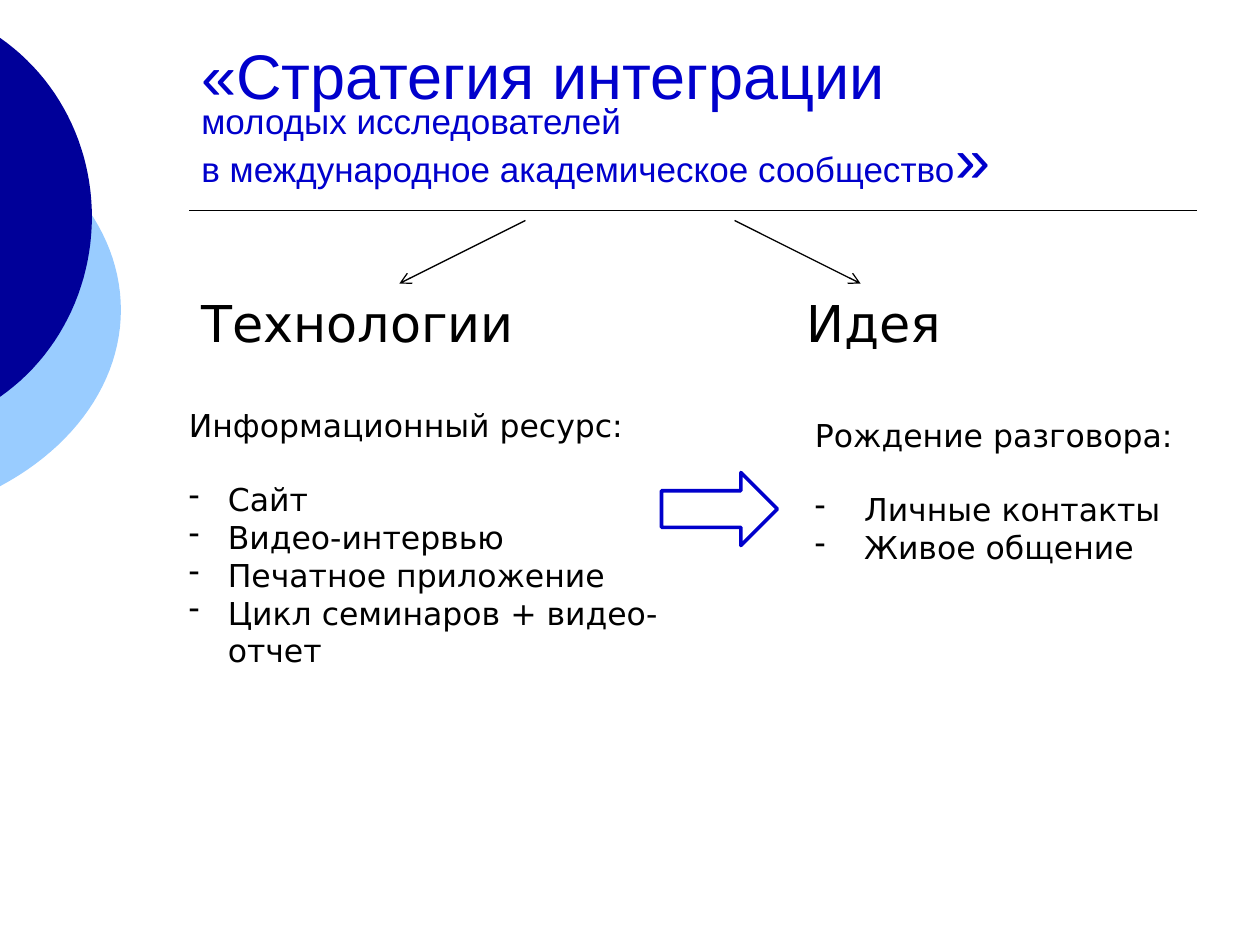
from lxml import etree
from pptx import Presentation
from pptx.dml.color import RGBColor
from pptx.enum.shapes import MSO_CONNECTOR, MSO_SHAPE
from pptx.enum.text import MSO_ANCHOR
from pptx.oxml.ns import qn
from pptx.util import Inches, Pt

BLACK, WHITE, BLUE = "000000", "FFFFFF", "0000CC"
NAVY, SKY = "000099", "99CCFF"
CURVE_STEPS = 24


def color(hex_string):
    return RGBColor.from_string(hex_string)


def bezier(points):
    """Return points along a cubic curve, without its start."""
    result = []
    for step in range(1, CURVE_STEPS + 1):
        t = step / CURVE_STEPS
        weights = ((1 - t) ** 3, 3 * t * (1 - t) ** 2, 3 * t * t * (1 - t), t ** 3)
        result.append(tuple(sum(w * p[axis] for w, p in zip(weights, points))
                            for axis in (0, 1)))
    return result


class SlideBuilder:
    title_font = "Arial"
    body_font = "DejaVu Sans"

    def __init__(self, slide):
        self.slide = slide

    def edge_disc(self, top, middle, bottom, reach, bulge, shoulder, fill):
        """Draw the part of a disc that bulges in from the left slide edge."""
        upper = [(0, top), (bulge, top + shoulder),
                 (reach, middle - (middle - top) * 0.4), (reach, middle)]
        lower = [(reach, middle), (reach, middle + (bottom - middle) * 0.4),
                 (bulge, bottom - shoulder), (0, bottom)]
        outline = bezier(upper) + bezier(lower)
        builder = self.slide.shapes.build_freeform(0, Inches(top), scale=1.0)
        builder.add_line_segments([(Inches(x), Inches(y)) for x, y in outline], close=True)
        shape = builder.convert_to_shape()
        shape.shadow.inherit = False
        shape.fill.solid()
        shape.fill.fore_color.rgb = color(fill)
        shape.line.fill.background()

    def line(self, start, end, width, arrow=False):
        connector = self.slide.shapes.add_connector(
            MSO_CONNECTOR.STRAIGHT, *(Inches(value) for value in start + end))
        connector.line.color.rgb = color(BLACK)
        connector.line.width = Pt(width)
        properties = connector._element.spPr
        if arrow:
            etree.SubElement(properties.find(qn("a:ln")), qn("a:tailEnd"), type="arrow")
        etree.SubElement(properties, qn("a:effectLst"))

    def text_frame(self, left, top, width, height, fill=None):
        box = self.slide.shapes.add_textbox(
            Inches(left), Inches(top), Inches(width), Inches(height))
        if fill:
            box.fill.solid()
            box.fill.fore_color.rgb = color(fill)
        box.text_frame.word_wrap = True
        return box.text_frame

    def style(self, paragraph, name, size, font_color):
        paragraph.font.name = name
        paragraph.font.size = Pt(size)
        paragraph.font.color.rgb = color(font_color)

    def title(self, left, top, width, height, lines):
        """Write one paragraph; each line is a list of (text, size) runs."""
        frame = self.text_frame(left, top, width, height)
        frame.vertical_anchor = MSO_ANCHOR.BOTTOM
        paragraph = frame.paragraphs[0]
        paragraph.line_spacing = 0.7
        self.style(paragraph, self.title_font, 20, BLUE)
        for index, runs in enumerate(lines):
            if index:
                paragraph.add_line_break()
            for text, size in runs:
                run = paragraph.add_run()
                run.text = text
                run.font.size = Pt(size)

    def headings(self, left, top, width, height, texts, tab):
        paragraph = self.text_frame(left, top, width, height).paragraphs[0]
        paragraph.text = "\t".join(texts)
        tabs = etree.SubElement(paragraph._p.get_or_add_pPr(), qn("a:tabLst"))
        etree.SubElement(tabs, qn("a:tab"), pos=str(Inches(tab)), algn="l")
        self.style(paragraph, self.body_font, 29, BLACK)

    def dash_list(self, left, top, width, height, heading, items, indent, fill=None):
        frame = self.text_frame(left, top, width, height, fill)
        first = frame.paragraphs[0]
        first.text = heading
        first.space_after = Pt(21)
        self.style(first, self.body_font, 18, BLACK)
        for item in items:
            paragraph = frame.add_paragraph()
            paragraph.text = item
            properties = paragraph._p.get_or_add_pPr()
            properties.set("marL", str(Inches(indent)))
            properties.set("indent", str(-Inches(indent)))
            etree.SubElement(properties, qn("a:buChar"), char="-")
            self.style(paragraph, self.body_font, 18, BLACK)

    def block_arrow(self, left, top, width, height):
        shape = self.slide.shapes.add_shape(
            MSO_SHAPE.RIGHT_ARROW, Inches(left), Inches(top), Inches(width), Inches(height))
        shape.shadow.inherit = False
        shape.fill.solid()
        shape.fill.fore_color.rgb = color(WHITE)
        shape.line.color.rgb = color(BLUE)
        shape.line.width = Pt(2)


def main():
    presentation = Presentation()
    presentation.slide_width = Inches(10)
    presentation.slide_height = Inches(7.5)
    builder = SlideBuilder(presentation.slides.add_slide(presentation.slide_layouts[6]))

    builder.edge_disc(1.06, 2.46, 3.86, reach=0.96, bulge=0.6, shoulder=0.32, fill=SKY)
    builder.edge_disc(0.3, 1.72, 3.15, reach=0.73, bulge=0.46, shoulder=0.32, fill=NAVY)
    builder.line((1.5, 1.67), (9.5, 1.67), 1)

    builder.title(1.5, 0.33, 8, 1.25, [
        [("«Стратегия интеграции", 36)],
        [("молодых исследователей", 20)],
        [("в международное академическое сообщество", 20), ("»", 36)],
    ])
    builder.headings(1.5, 2.27, 8, 0.67, ["Технологии", "Идея"], tab=4.8)
    for start, end in ((4.17, 3.17), (5.83, 6.83)):
        builder.line((start, 1.75), (end, 2.25), 0.75, arrow=True)

    builder.dash_list(6.37, 3.25, 3.63, 1.31, "Рождение разговора:",
                      ["Личные контакты", "Живое общение"], indent=0.39, fill=WHITE)
    builder.dash_list(1.4, 3.17, 4.64, 1.92, "Информационный ресурс:",
                      ["Сайт", "Видео-интервью", "Печатное приложение",
                       "Цикл семинаров + видео-отчет"], indent=0.31)
    builder.block_arrow(5.25, 3.75, 0.92, 0.58)
    presentation.save("out.pptx")


if __name__ == "__main__":
    main()
